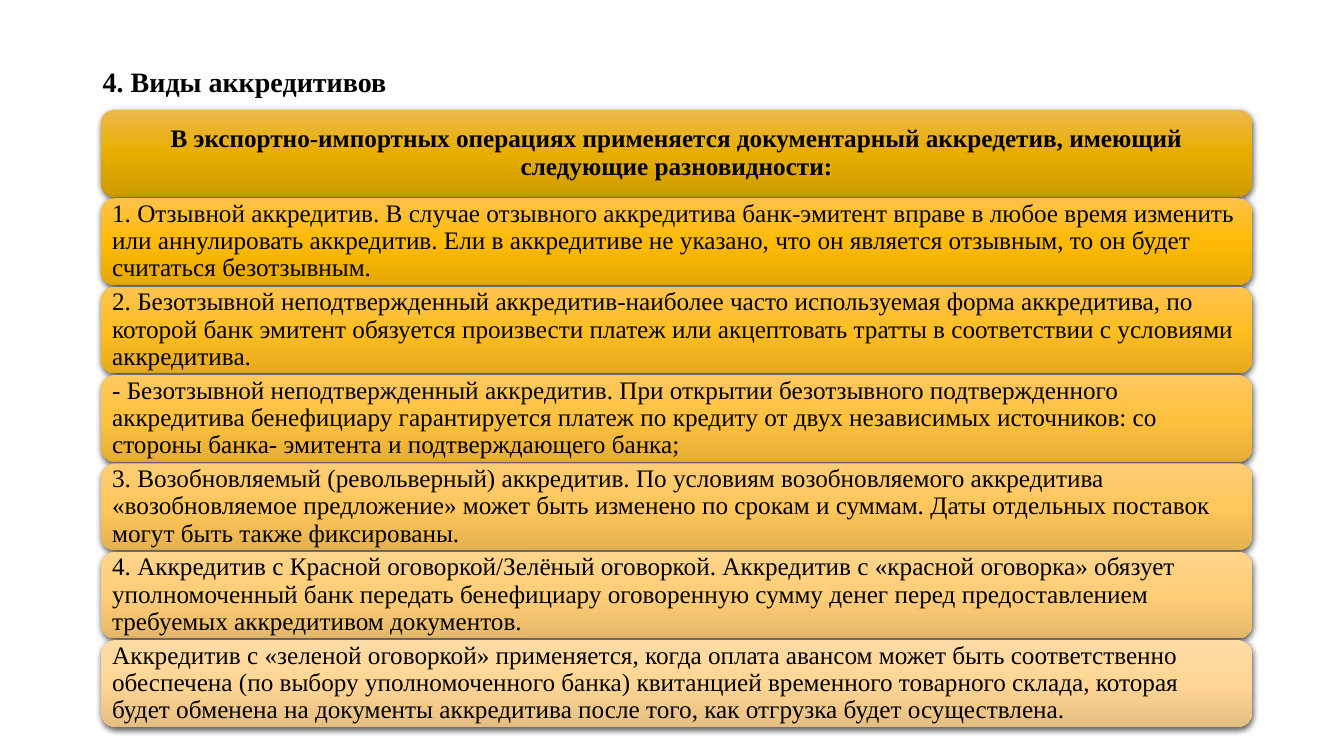
from lxml import etree
from pptx import Presentation
from pptx.dml.color import RGBColor
from pptx.enum.shapes import MSO_SHAPE
from pptx.enum.text import MSO_ANCHOR, PP_ALIGN
from pptx.oxml import parse_xml
from pptx.oxml.ns import nsdecls, qn
from pptx.util import Inches, Pt

FONT = "Times New Roman"
COLORS = {
    "text": "000000",
    "shadow": "000000",
    "bars": [
        ("EDB84B", "E7AE00", "CE9B00"),
        ("FFC24B", "FFBB05", "E5A802"),
        ("FFC452", "FFBE22", "E5AA1C"),
        ("FFC860", "FFC23F", "E5AD36"),
        ("FFCD75", "FFC75C", "E5B24F"),
        ("FFD48C", "FFCE78", "E5B769"),
        ("FFDBA5", "FFD695", "E5BE82"),
    ],
}
TITLE = "4. Виды аккредитивов"
HEADING = ("В экспортно-импортных операциях применяется документарный аккредетив, "
           "имеющий следующие разновидности:")
KINDS = [
    "1. Отзывной аккредитив. В случае отзывного аккредитива банк-эмитент вправе в любое "
    "время изменить или аннулировать аккредитив. Ели в аккредитиве не указано, что он "
    "является отзывным, то он будет считаться безотзывным.",
    "2. Безотзывной неподтвержденный аккредитив-наиболее часто используемая форма "
    "аккредитива, по которой банк эмитент обязуется произвести платеж или акцептовать "
    "тратты в соответствии с условиями аккредитива.",
    "- Безотзывной неподтвержденный аккредитив. При открытии безотзывного подтвержденного "
    "аккредитива бенефициару гарантируется платеж по кредиту от двух независимых "
    "источников: со стороны банка- эмитента и подтверждающего банка;",
    "3. Возобновляемый (револьверный) аккредитив. По условиям возобновляемого аккредитива "
    "«возобновляемое предложение» может быть изменено по срокам и суммам. Даты отдельных "
    "поставок могут быть также фиксированы.",
    "4. Аккредитив с Красной оговоркой/Зелёный оговоркой. Аккредитив с «красной оговорка» "
    "обязует уполномоченный банк передать бенефициару оговоренную сумму денег перед "
    "предоставлением требуемых аккредитивом документов.",
    "Аккредитив с «зеленой оговоркой» применяется, когда оплата авансом может быть "
    "соответственно обеспечена (по выбору уполномоченного банка) квитанцией временного "
    "товарного склада, которая будет обменена на документы аккредитива после того, как "
    "отгрузка будет осуществлена.",
]


def add_text(tf, text, size, bold=False, align=PP_ALIGN.LEFT):
    tf.word_wrap = True
    p = tf.paragraphs[0]
    p.alignment = align
    p.line_spacing = 0.9
    r = p.add_run()
    r.text = text
    r.font.name = FONT
    r.font.size = Pt(size)
    r.font.bold = bold
    r.font.color.rgb = RGBColor.from_string(COLORS["text"])


def set_gradient(sp, colors):
    """Fill a shape from top to bottom with evenly spaced colours."""
    step = 100000 // (len(colors) - 1)
    stops = "".join(f'<a:gs pos="{i * step}"><a:srgbClr val="{c}"/></a:gs>'
                    for i, c in enumerate(colors))
    sp._element.spPr.find(qn("a:prstGeom")).addnext(parse_xml(
        f'<a:gradFill {nsdecls("a")} rotWithShape="1"><a:gsLst>{stops}</a:gsLst>'
        '<a:lin ang="5400000" scaled="0"/></a:gradFill>'))


def set_shadow(sp):
    """Give a shape a soft shadow straight below it."""
    sp.shadow.inherit = False
    shadow = etree.SubElement(
        sp._element.spPr.find(qn("a:effectLst")), qn("a:outerShdw"),
        blurRad=str(Pt(4.5)), dist=str(Pt(1.5)), dir="5400000", algn="ctr", rotWithShape="0")
    color = etree.SubElement(shadow, qn("a:srgbClr"), val=COLORS["shadow"])
    etree.SubElement(color, qn("a:alpha"), val="63000")


def add_title(s, x, y, w, h):
    tb = s.shapes.add_textbox(Inches(x), Inches(y), Inches(w), Inches(h))
    add_text(tb.text_frame, TITLE, 20, bold=True)


def add_bar(s, x, y, w, h, text, colors, heading=False):
    sp = s.shapes.add_shape(MSO_SHAPE.ROUNDED_RECTANGLE,
                            Inches(x), Inches(y), Inches(w), Inches(h))
    set_gradient(sp, colors)
    sp.line.fill.background()
    set_shadow(sp)
    tf = sp.text_frame
    tf.margin_left = tf.margin_right = tf.margin_top = tf.margin_bottom = Inches(0.07)
    tf.vertical_anchor = MSO_ANCHOR.MIDDLE
    add_text(tf, text, 18, bold=heading,
             align=PP_ALIGN.CENTER if heading else PP_ALIGN.LEFT)


def add_bars(s, x, y, w, h):
    """Stack the heading and the kinds of credit in equal bars."""
    texts = [HEADING] + KINDS
    gap = 0.016
    bar_h = (h - gap * (len(texts) - 1)) / len(texts)
    for i, (text, colors) in enumerate(zip(texts, COLORS["bars"])):
        add_bar(s, x, y + i * (bar_h + gap), w, bar_h, text, colors, heading=i == 0)


def main():
    prs = Presentation()
    prs.slide_width, prs.slide_height = Inches(13.33), Inches(7.5)
    s = prs.slides.add_slide(prs.slide_layouts[6])
    add_title(s, 0.92, 0.63, 11.5, 0.42)
    add_bars(s, 1, 1.09, 11.42, 6.12)
    prs.save("out.pptx")


if __name__ == "__main__":
    main()
